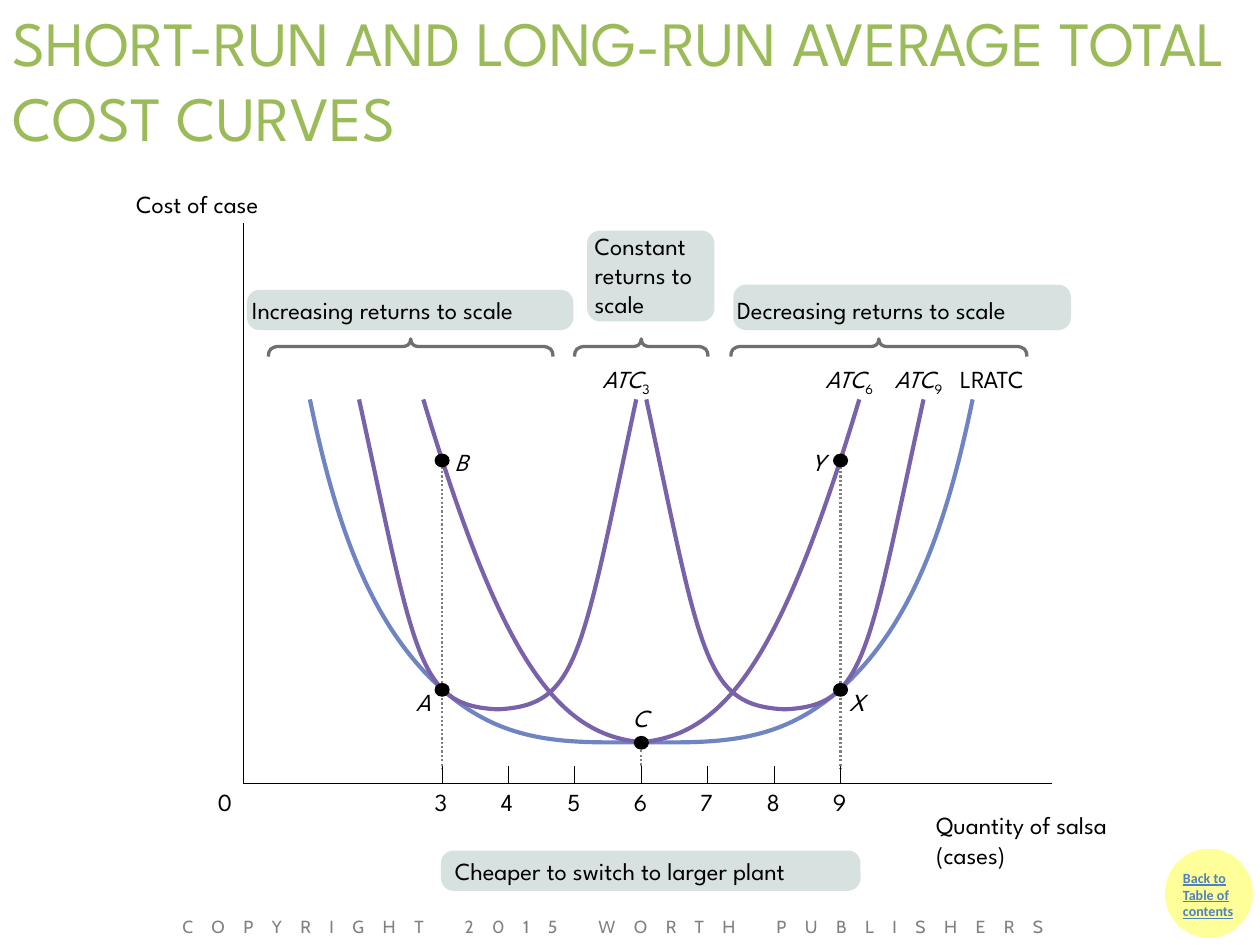
import pptx
import pptx.dml.color
import pptx.enum.dml
import pptx.enum.shapes
import pptx.enum.text
import pptx.oxml.ns
import pptx.util
import lxml.etree

COLORS = {"title": "9BBB59", "black": "000000", "gray": "808080", "panel": "D7E2E0",
          "brace": "6D6F71", "long_run": "6F84C2", "short_run": "7962AA",
          "badge": "FFFF99", "link": "4F81BD"}
COLUMNS, ROWS = 10, 7.5
WIDTH, HEIGHT = pptx.util.Inches(10), pptx.util.Inches(7.5)
BODY_FONT = "League Spartan"

CENTER, UNIT = 5.09, 0.527
AXIS_LEFT, AXIS_RIGHT, AXIS_TOP, AXIS_BOTTOM = 1.93, 8.35, 1.77, 6.22
TICK_TOP, TICK_LABEL_TOP = 6.08, 6.25
QUANTITIES = range(3, 10)
DROPS = [(3, 3.67, 6.1), (6, 5.92, 6.08), (9, 3.67, 6.1)]
POINTS = [(6, 5.89), (3, 5.47), (9, 3.65), (3, 3.65), (9, 5.47)]

PANELS = [(1.96, 2.3, 2.59, 0.32), (5.82, 2.26, 2.68, 0.36),
          (4.66, 1.83, 1.01, 0.72), (3.5, 6.75, 3.33, 0.32)]
BRACES = [(2.13, 4.39), (5.8, 8.15), (4.56, 5.62)]
LABELS = [
    ("Increasing returns to scale", (2, 2.34, 2.47, 0.24), {}),
    ("Decreasing returns to scale", (5.85, 2.34, 2.58, 0.24), {}),
    ("Constant returns to scale", (4.72, 1.83, 0.87, 0.71), {"wrap": True}),
    ("Cheaper to switch to larger plant", (3.61, 6.79, 3.16, 0.24), {}),
    ("Cost of case", (1.08, 1.5, 1.39, 0.24), {"wrap": True}),
    ("Quantity of salsa (cases)", (7.43, 6.43, 1.45, 0.47), {"wrap": True}),
    ("LRATC", (7.62, 2.89, 0.58, 0.24), {}),
    ("ATC", (4.78, 2.89, 0.49, 0.24), {"italic": True, "subscript": "3"}),
    ("ATC", (6.55, 2.89, 0.49, 0.24), {"italic": True, "subscript": "6"}),
    ("ATC", (7.1, 2.89, 0.49, 0.24), {"italic": True, "subscript": "9"}),
    ("A", (3.3, 5.45, 0.19, 0.24), {"italic": True}),
    ("B", (3.61, 3.55, 0.14, 0.24), {"italic": True}),
    ("C", (5.02, 5.58, 0.19, 0.24), {"italic": True}),
    ("X", (6.74, 5.45, 0.15, 0.24), {"italic": True}),
    ("Y", (6.44, 3.55, 0.15, 0.24), {"italic": True}),
    ("0", (1.73, TICK_LABEL_TOP, 0.11, 0.24), {}),
]
LONG_RUN_HALF = [(2.46, 3.17), (2.67, 4.19), (2.95, 4.97), (3.51, 5.47),
                 (3.99, 5.9), (4.47, 5.9), (CENTER, 5.89)]
ATC_SIX_HALF = [(3.36, 3.17), (3.97, 5.2), (4.41, 5.83), (CENTER, 5.89)]
ATC_THREE = [(2.85, 3.17), (3.3, 5.23), (3.31, 5.6), (3.95, 5.63),
             (4.59, 5.6), (4.61, 5.23), (5.05, 3.17)]

presentation = pptx.Presentation()
presentation.slide_width, presentation.slide_height = WIDTH, HEIGHT
slide = presentation.slides.add_slide(presentation.slide_layouts[6])
shapes = slide.shapes


def across(columns):
    return round(WIDTH * columns / COLUMNS)


def down(rows):
    return round(HEIGHT * rows / ROWS)


def place(box):
    left, top, width, height = box
    return across(left), down(top), across(width), down(height)


def quantity_x(quantity):
    return CENTER + (quantity - 6) * UNIT


def rgb(name):
    return pptx.dml.color.RGBColor.from_string(COLORS[name])


def set_line(line, color, width):
    line.color.rgb = rgb(color)
    line.width = pptx.util.Pt(width)


def add_text(text, box, size=14, font=BODY_FONT, color="black", bold=False, italic=False,
             underline=False, subscript="", spacing=0, wrap=False, inset=0, middle=False,
             grow=True):
    frame = shapes.add_textbox(*place(box)).text_frame
    frame.word_wrap = wrap
    if grow:
        frame.auto_size = pptx.enum.text.MSO_AUTO_SIZE.SHAPE_TO_FIT_TEXT
    frame.margin_left = frame.margin_right = across(inset)
    frame.margin_top = frame.margin_bottom = down(inset / 2)
    if middle:
        frame.vertical_anchor = pptx.enum.text.MSO_ANCHOR.MIDDLE
    paragraph = frame.paragraphs[0]
    for part in filter(None, (text, subscript)):
        run = paragraph.add_run()
        run.text = part
        run.font.size = pptx.util.Pt(size)
        run.font.name = font
        run.font.color.rgb = rgb(color)
        run.font.bold, run.font.underline = bold, underline
        run.font.italic = italic
        if spacing:
            run.font._element.set("spc", str(round(spacing * 100)))
    if subscript:
        run.font.italic = False
        run.font._element.set("baseline", "-25000")


def add_filled(kind, box, color):
    shape = shapes.add_shape(kind, *place(box))
    shape.shadow.inherit = False
    shape.fill.solid()
    shape.fill.fore_color.rgb = rgb(color)
    shape.line.fill.background()
    return shape


def add_line(x, top, bottom, color, width, dotted=False):
    line = shapes.add_connector(pptx.enum.shapes.MSO_CONNECTOR.STRAIGHT,
                                across(x), down(top), across(x), down(bottom))
    set_line(line.line, color, width)
    if dotted:
        line.line.dash_style = pptx.enum.dml.MSO_LINE.ROUND_DOT
    lxml.etree.SubElement(line._element.spPr, pptx.oxml.ns.qn("a:effectLst"))


def add_outline(points, color, width):
    vertices = [(across(x), down(y)) for x, y in points]
    builder = shapes.build_freeform(*vertices[0])
    builder.add_line_segments(vertices[1:], close=False)
    shape = builder.convert_to_shape()
    shape.shadow.inherit = False
    shape.fill.background()
    set_line(shape.line, color, width)
    return shape


def add_curve(controls, color, width):
    shape = add_outline(controls, color, width)
    segments = list(shape._element.iter(pptx.oxml.ns.qn("a:lnTo")))
    outline = segments[0].getparent()
    for start in range(0, len(segments), 3):
        curve = lxml.etree.SubElement(outline, pptx.oxml.ns.qn("a:cubicBezTo"))
        for segment in segments[start:start + 3]:
            curve.append(segment[0])
            outline.remove(segment)


def mirror(points, center=CENTER):
    return [(2 * center - x, y) for x, y in reversed(points)]


def brace(left, right, top=2.69, middle=2.75, bottom=2.83):
    center = (left + right) / 2
    half = [(left, bottom), (left, 2.78), (left + 0.02, middle), (left + 0.09, middle),
            (left + 0.1, middle), (center - 0.08, middle), (center - 0.06, middle),
            (center - 0.04, middle), (center, 2.74), (center, top)]
    return half + mirror(half, center)[1:]


ellipse = pptx.enum.shapes.MSO_SHAPE.OVAL
badge = add_filled(ellipse, (9.26, 6.75, 0.67, 0.68), "badge")
set_line(badge.line, "badge", 2)
add_text("Back to Table of contents", (9.29, 6.85, 0.72, 0.67), size=8, font="Calibri",
         color="link", bold=True, underline=True, wrap=True, inset=0.1)
add_text("SHORT-RUN AND LONG-RUN AVERAGE TOTAL COST CURVES", (0, 0, 10, 1.25), size=36,
         color="title", wrap=True, inset=0.1, middle=True, grow=False)

for quantity, top, bottom in DROPS:
    add_line(quantity_x(quantity), top, bottom, "gray", 1.25, dotted=True)
add_outline([(AXIS_RIGHT, AXIS_BOTTOM), (AXIS_LEFT, AXIS_BOTTOM), (AXIS_LEFT, AXIS_TOP)],
            "black", 0.63)
for quantity in QUANTITIES:
    x = quantity_x(quantity)
    add_line(x, AXIS_BOTTOM, TICK_TOP, "black", 0.63)
    add_text(str(quantity), (x - 0.06, TICK_LABEL_TOP, 0.11, 0.24))

for box in PANELS:
    panel = add_filled(pptx.enum.shapes.MSO_SHAPE.ROUNDED_RECTANGLE, box, "panel")
    panel.adjustments[0] = 0.1 / min(box[2:])
for left, right in BRACES:
    add_curve(brace(left, right), "brace", 1.88)

add_curve(LONG_RUN_HALF + mirror(LONG_RUN_HALF)[1:], "long_run", 2.38)
for curve in (ATC_SIX_HALF, ATC_THREE):
    for controls in (curve, mirror(curve)):
        add_curve(controls, "short_run", 2.38)
for quantity, y in POINTS:
    add_filled(ellipse, (quantity_x(quantity) - 0.06, y - 0.05, 0.12, 0.11), "black")
for text, box, style in LABELS:
    add_text(text, box, **style)
add_text("COPYRIGHT 2015 WORTH PUBLISHERS", (1.35, 7.22, 7.76, 0.25), size=10, font="Cabin",
         color="gray", spacing=10.6, wrap=True, inset=0.1, grow=False)

presentation.save("out.pptx")
